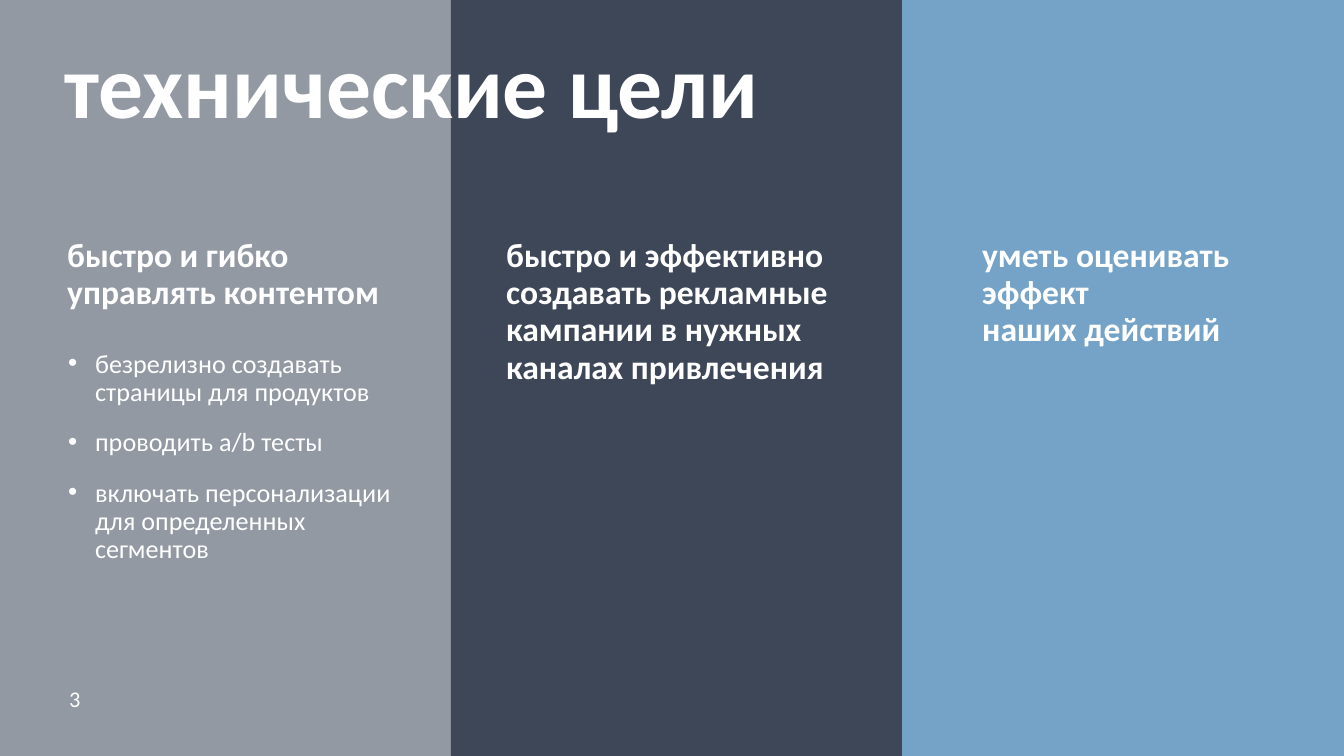
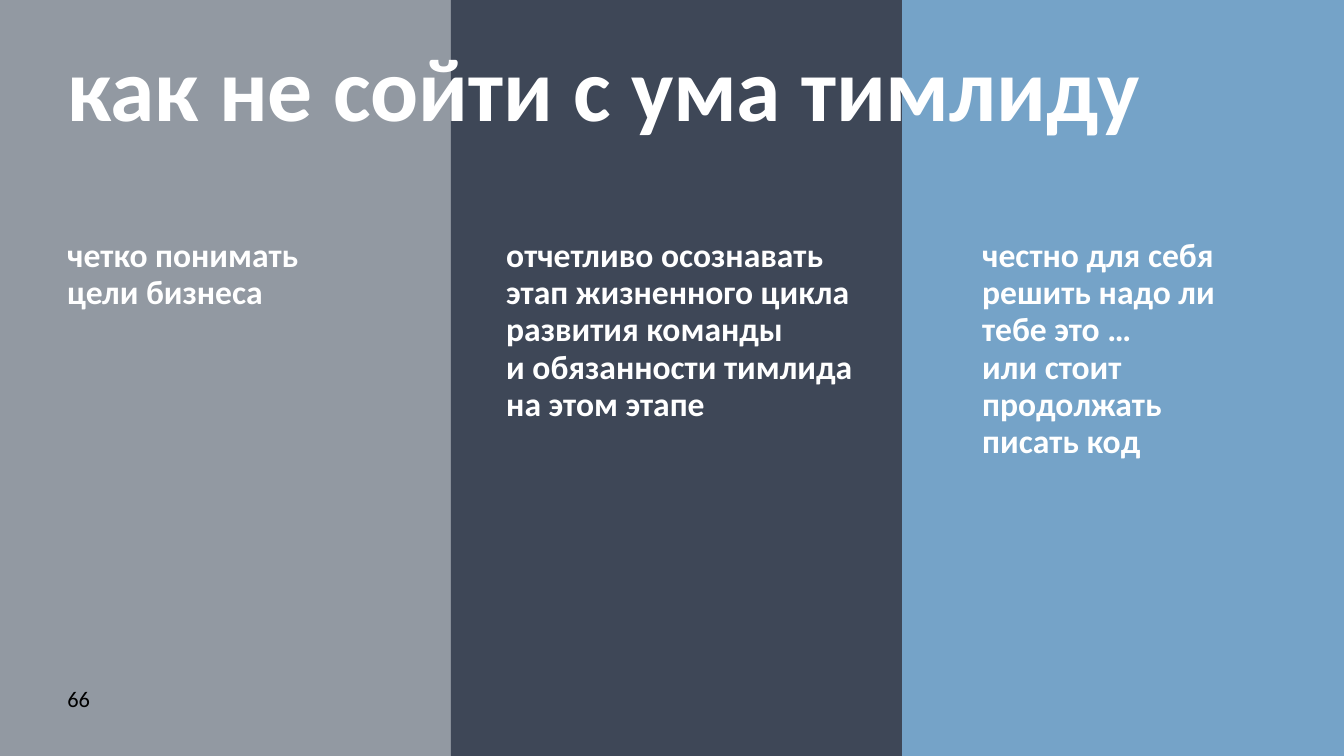
from lxml import etree
from pptx import Presentation
from pptx.dml.color import RGBColor
from pptx.enum.shapes import MSO_SHAPE
from pptx.enum.text import MSO_ANCHOR, MSO_AUTO_SIZE
from pptx.oxml.ns import qn
from pptx.util import Emu, Pt

WHITE = RGBColor(0xFF, 0xFF, 0xFF)
BLACK = RGBColor(0x00, 0x00, 0x00)
GREY = RGBColor(0x92, 0x99, 0xA2)
NAVY = RGBColor(0x3E, 0x47, 0x57)
BLUE = RGBColor(0x75, 0xA3, 0xC8)

ROUND = MSO_SHAPE.ROUNDED_RECTANGLE
TOP, MIDDLE = MSO_ANCHOR.TOP, MSO_ANCHOR.MIDDLE
GROW = MSO_AUTO_SIZE.SHAPE_TO_FIT_TEXT

FONT = "Calibri"
WIDTH, HEIGHT = 1344, 756
BAND = 451
HEAD_TOP = 230
HEAD_LEFTS = (54, 493, 969)
INDENT = 27


def px(n):
    return Emu(round(n * 9144000 / WIDTH))


def add_bands(slide):
    for i, color in enumerate((GREY, NAVY, BLUE)):
        left = i * BAND
        wide = min(BAND, WIDTH - left)
        band = slide.shapes.add_shape(ROUND, px(left), 0, px(wide), px(HEIGHT))
        band.adjustments[0] = 0
        band.shadow.inherit = False
        band.fill.solid()
        band.fill.fore_color.rgb = color
        band.line.fill.background()


def add_bullet(para):
    props = para._p.get_or_add_pPr()
    props.set("marL", str(px(INDENT)))
    props.set("indent", str(-px(INDENT)))
    tint = etree.SubElement(props, qn("a:buClr"))
    etree.SubElement(tint, qn("a:srgbClr")).set("val", str(WHITE))
    etree.SubElement(props, qn("a:buFont")).set("typeface", "Arial")
    etree.SubElement(props, qn("a:buChar")).set("char", "•")


def add_text(slide, box, paras, size, color=WHITE, bold=False, lead=None,
             after=None, bullet=False, anchor=TOP):
    """Add a text box; lead is the exact line spacing in points."""
    frame = slide.shapes.add_textbox(*map(px, box)).text_frame
    frame.word_wrap = True
    frame.vertical_anchor = anchor
    if lead:
        frame.auto_size = GROW
    for i, text in enumerate(paras):
        para = frame.add_paragraph() if i else frame.paragraphs[0]
        para.text = text
        if lead:
            para.line_spacing = Pt(lead)
        if after:
            para.space_after = Pt(after)
        if bullet:
            para.level = 1
            add_bullet(para)
        for run in para.runs:
            font = run.font
            font.name, font.size, font.bold = FONT, Pt(size), bold
            font.color.rgb = color


def add_title(slide, left, top, text):
    add_text(slide, (left, top, 1210, 126), [text], 48, bold=True, anchor=MIDDLE)


def add_heads(slide, heads):
    """Each head is its text, box width and number of lines."""
    for left, (text, wide, lines) in zip(HEAD_LEFTS, heads):
        tall = 14 + lines * 112 // 3
        add_text(slide, (left, HEAD_TOP, wide, tall), [text], 18,
                 bold=True, lead=20)


def add_number(slide, left, text, color):
    add_text(slide, (left, 679, 313, 40), [text], 12, color)


def add_slide(deck):
    slide = deck.slides.add_slide(deck.slide_layouts[6])
    add_bands(slide)
    return slide


def add_goals(deck):
    slide = add_slide(deck)
    add_title(slide, 51, 20, "технические цели")
    add_heads(slide, [
        ("быстро и гибко \nуправлять контентом", 427, 2),
        ("быстро и эффективно создавать рекламные кампании в нужных \n"
         "каналах привлечения", 476, 4),
        ("уметь оценивать эффект \nнаших действий", 297, 3),
    ])
    add_text(slide, (55, 344, 534, 228), [
        "безрелизно создавать \nстраницы для продуктов",
        "проводить a/b тесты",
        "включать персонализации \nдля определенных \nсегментов",
    ], 14, lead=15, after=12, bullet=True)
    add_number(slide, 56, "3", WHITE)


def add_advice(deck):
    slide = add_slide(deck)
    add_heads(slide, [
        ("четко понимать \nцели бизнеса", 427, 2),
        ("отчетливо осознавать этап жизненного цикла развития команды \n"
         "и обязанности тимлида на этом этапе", 384, 5),
        ("честно для себя решить надо ли тебе это …\n"
         "или стоит продолжать писать код", 297, 6),
    ])
    add_number(slide, 54, "66", BLACK)
    add_title(slide, 54, 23, "как не сойти с ума тимлиду")


def main():
    deck = Presentation()
    deck.slide_width, deck.slide_height = px(WIDTH), px(HEIGHT)
    add_goals(deck)
    add_advice(deck)
    deck.save("out.pptx")


if __name__ == "__main__":
    main()
